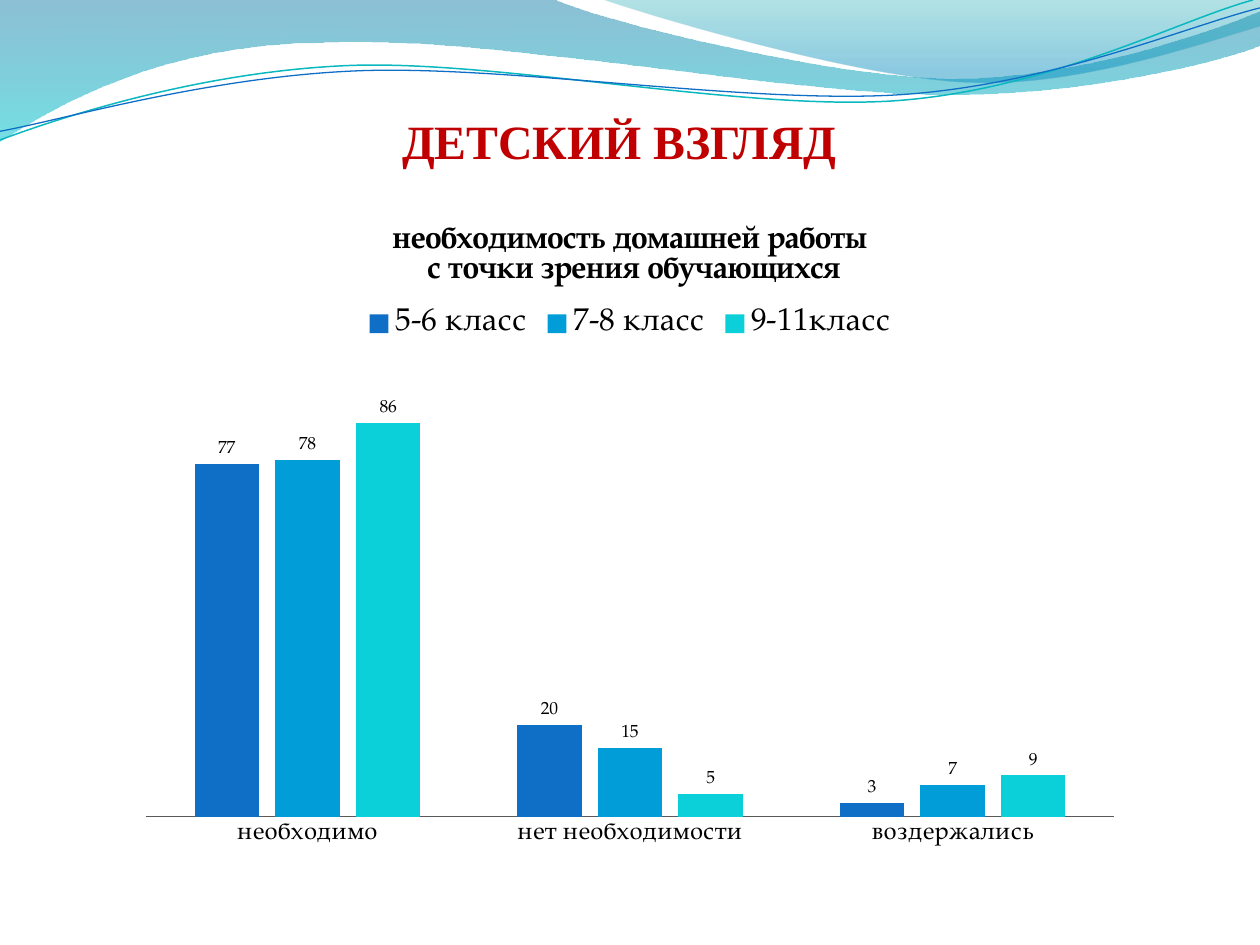
"""Builds a slide with a wave header, a title and a clustered column chart of pupils' views on homework."""
import pptx
import pptx.chart.data
import pptx.dml.color
import pptx.enum.chart
import pptx.enum.text
import pptx.oxml
import pptx.oxml.ns
import pptx.util

Pt = pptx.util.Pt
RGB = pptx.dml.color.RGBColor.from_string
qn = pptx.oxml.ns.qn
NS = pptx.oxml.ns.nsdecls("a")
FONT = "TeX Gyre Pagella"
HEX = {
    "title": "C00000", "text": "000000", "axis": "595959",
    "blue": "0F6FC6", "sky": "009DD9", "aqua": "0BD0D9", "teal": "0AB8BF",
    "deep": "0074A1", "cyan": "00C6CF", "green": "00A1A9", "azure": "008BBF",
}


def style(font, size, bold=False, color="text", name=FONT):
    font.size, font.bold, font.name = Pt(size), bold, name
    font.color.rgb = RGB(HEX[color])


def draw(start, parts, close):
    spots = [(x * 100, y * 100) for part in parts for x, y in zip(part[::2], part[1::2])]
    pen = slide.shapes.build_freeform(start[0] * 100, start[1] * 100, scale=127)
    pen.add_line_segments(spots, close=close)
    shape = pen.convert_to_shape()
    shape.shadow.inherit = False
    sides = iter(list(shape.element.iter(qn("a:lnTo"))))
    for part in parts:
        side = next(sides)
        if len(part) == 6:
            curve = pptx.oxml.parse_xml(f"<a:cubicBezTo {NS}/>")
            side.addprevious(curve)
            for step in (side, next(sides), next(sides)):
                curve.append(step[0])
                step.getparent().remove(step)
    return shape


deck = pptx.Presentation()
deck.slide_width, deck.slide_height = Pt(720), Pt(540)
slide = deck.slides.add_slide(deck.slide_layouts[5])

waves = [
    ((0, 0),
     [(317, 0), (343, 12, 478, 45, 546, 45), (614, 45, 690, 19, 720, 6.5),
      (720, 26), (708, 32, 626, 55, 537, 54), (448, 54, 275, 20, 185, 24.5),
      (93, 25, 33, 60, 0, 81)],
     [(0, "deep", 45), (1, "cyan", 55)]),
    ((345, 0),
     [(367, 8, 491, 45, 554, 47), (616, 50, 692, 23, 720, 15), (720, 0)],
     [(0, "green", 30), (0.8, "azure", 45)]),
]
for start, parts, stops in waves:
    wave = draw(start, parts, True)
    wave.line.fill.background()
    wave.fill.gradient()
    wave.fill.gradient_angle = 270
    for stop, (place, color, alpha) in zip(wave.fill.gradient_stops, stops):
        stop.position = place
        stop.color.rgb = RGB(HEX[color])
    tints = wave.element.spPr.iter(qn("a:srgbClr"))
    for tint, (place, color, alpha) in zip(tints, stops):
        tint.append(pptx.oxml.parse_xml(f'<a:alpha {NS} val="{alpha * 1000}"/>'))

curves = [
    ((0, 80),
     [(35, 67, 114, 41, 199, 37.5), (284, 34, 427, 64, 513, 57.5),
      (600, 51, 675, 11, 716, 0)], "teal", 0.85),
    ((0, 75),
     [(34, 69, 118, 44, 204, 40.5), (290, 37, 430, 60, 516, 54),
      (602, 48, 678, 15, 720, 4.5)], "blue", 0.75),
]
for start, parts, color, width in curves:
    curve = draw(start, parts, False)
    curve.fill.background()
    curve.line.color.rgb = RGB(HEX[color])
    curve.line.width = Pt(width)

title = slide.shapes.title
curve.element.addnext(title.element)
title.left, title.top, title.width, title.height = Pt(18), Pt(59.76), Pt(671.76), Pt(102.24)
frame = title.text_frame
frame.word_wrap = True
frame.auto_size = pptx.enum.text.MSO_AUTO_SIZE.NONE
frame.vertical_anchor = pptx.enum.text.MSO_ANCHOR.TOP
frame.margin_left = frame.margin_right = frame.margin_bottom = 0
frame.margin_top = Pt(3.9)
line = frame.paragraphs[0]
line.alignment = pptx.enum.text.PP_ALIGN.CENTER
run = line.add_run()
run.text = "ДЕТСКИЙ ВЗГЛЯД"
style(run.font, 27.3, True, "title", "Times New Roman")

series = [
    ("5-6 класс", (77, 20, 3), "blue"),
    ("7-8 класс", (78, 15, 7), "sky"),
    ("9-11класс", (86, 5, 9), "aqua"),
]
data = pptx.chart.data.CategoryChartData()
data.categories = ["необходимо", "нет необходимости", "воздержались"]
for name, values, color in series:
    data.add_series(name, values)
kind = pptx.enum.chart.XL_CHART_TYPE.COLUMN_CLUSTERED
holder = slide.shapes.add_chart(kind, Pt(72), Pt(114), Pt(576), Pt(377.28), data)
chart = holder.chart
style(chart.font, 10)

chart.has_title = True
head = chart.chart_title.text_frame
for i, text in enumerate(["необходимость домашней работы", " с точки зрения обучающихся"]):
    line = head.add_paragraph() if i else head.paragraphs[0]
    run = line.add_run()
    run.text = text
    style(run.font, 18, True)
chart.chart_title.include_in_layout = False

chart.has_legend = True
chart.legend.position = pptx.enum.chart.XL_LEGEND_POSITION.TOP
chart.legend.include_in_layout = False
style(chart.legend.font, 18)

none = pptx.enum.chart.XL_TICK_MARK.NONE
base = chart.category_axis
base.major_tick_mark = base.minor_tick_mark = none
base.format.line.color.rgb = RGB(HEX["axis"])
base.format.line.width = Pt(0.75)
style(base.tick_labels.font, 14)
scale = chart.value_axis
scale.minimum_scale, scale.maximum_scale = 0, 100
scale.has_major_gridlines = False
scale.visible = False

plot = chart.plots[0]
plot.gap_width, plot.overlap, plot.vary_by_categories = 150, -25, False
for bars, (name, values, color) in zip(plot.series, series):
    bars.format.fill.solid()
    bars.format.fill.fore_color.rgb = RGB(HEX[color])
    labels = bars.data_labels
    labels.show_value = True
    labels.position = pptx.enum.chart.XL_LABEL_POSITION.OUTSIDE_END
    style(labels.font, 10)

deck.save("out.pptx")
